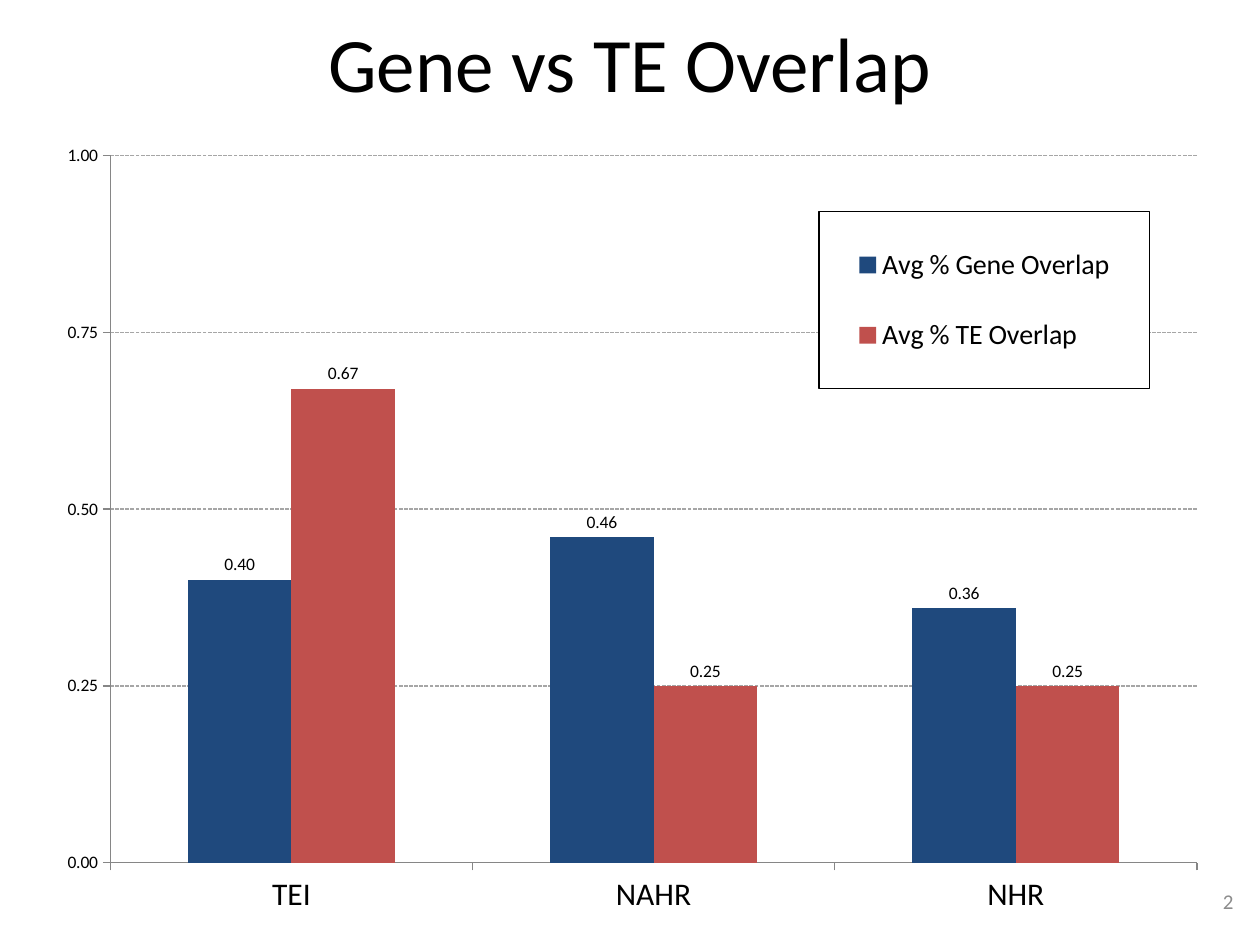
"""Build the Gene vs TE Overlap slide with a clustered column chart."""
from lxml import etree
from pptx import Presentation
from pptx import util as u
from pptx.chart.data import CategoryChartData
from pptx.dml.color import RGBColor
from pptx.enum import chart as ch, dml, text
from pptx.oxml import parse_xml
from pptx.oxml.ns import nsdecls, qn

TITLE = "Gene vs TE Overlap"
PAGE = "2"
CATEGORIES = ["TEI", "NAHR", "NHR"]
SERIES = [
    ("Avg % Gene Overlap", (0.40, 0.46, 0.36), "1F497D"),
    ("Avg % TE Overlap", (0.67, 0.25, 0.25), "C0504D"),
]
THEME = {
    "font": "Calibri", "ink": "000000", "paper": "FFFFFF", "page": "8C8C8C",
    "axis": "868686", "grid": "A6A6A6",
    "title": 44, "category": 18, "legend": 16, "number": 12, "label": 10,
}
BOXES = {
    "title": (36, -10, 648, 90),
    "chart": (22.5, 75, 675, 459.5),
    "page": (544.5, 500.5, 167.5, 28.5),
}
PLOT_AREA = {"x": 0.06, "y": 0.03, "w": 0.92, "h": 0.88}
LEGEND_AREA = {"x": 0.66, "y": 0.1, "w": 0.28, "h": 0.22}
NUMBER_FORMAT = "0.00"


def rgb(name):
    return RGBColor.from_string(THEME.get(name, name))


def style(font, size, color="ink"):
    font.name = THEME["font"]
    font.size = u.Pt(THEME[size])
    font.color.rgb = rgb(color)


def add_text(slide, content, box, size, color="ink", align="CENTER"):
    sp = slide.shapes.add_textbox(*map(u.Pt, BOXES[box]))
    tf = sp.text_frame
    tf.word_wrap = True
    tf.vertical_anchor = text.MSO_ANCHOR.MIDDLE
    p = tf.paragraphs[0]
    p.alignment = getattr(text.PP_ALIGN, align)
    r = p.add_run()
    r.text = content
    style(r.font, size, color)


def make_layout(area, inner=False):
    layout = etree.Element(qn("c:layout"))
    manual = etree.SubElement(layout, qn("c:manualLayout"))
    items = [("layoutTarget", "inner")] if inner else []
    items += [("xMode", "edge"), ("yMode", "edge"), *area.items()]
    for tag, value in items:
        etree.SubElement(manual, qn(f"c:{tag}")).set("val", str(value))
    return layout


def format_axis(axis, size):
    axis.major_tick_mark = ch.XL_TICK_MARK.OUTSIDE
    axis.minor_tick_mark = ch.XL_TICK_MARK.NONE
    axis.format.line.color.rgb = rgb("axis")
    axis.format.line.width = u.Pt(0.75)
    style(axis.tick_labels.font, size)


def format_legend(chart):
    chart.has_legend = True
    legend = chart.legend
    legend.position = ch.XL_LEGEND_POSITION.RIGHT
    legend.include_in_layout = False
    style(legend.font, "legend")
    element = legend._element
    for old in element.findall(qn("c:layout")):
        element.remove(old)
    element.find(qn("c:legendPos")).addnext(make_layout(LEGEND_AREA))
    element.find(qn("c:overlay")).addnext(parse_xml(
        f'<c:spPr {nsdecls("c", "a")}>'
        f'<a:solidFill><a:srgbClr val="{THEME["paper"]}"/></a:solidFill>'
        f'<a:ln w="9525"><a:solidFill><a:srgbClr val="{THEME["ink"]}"/></a:solidFill></a:ln>'
        "</c:spPr>"))


def add_overlap_chart(slide):
    data = CategoryChartData(number_format=NUMBER_FORMAT)
    data.categories = CATEGORIES
    for name, values, _ in SERIES:
        data.add_series(name, values)
    chart = slide.shapes.add_chart(
        ch.XL_CHART_TYPE.COLUMN_CLUSTERED, *map(u.Pt, BOXES["chart"]), data).chart
    chart.has_title = False
    style(chart.font, "label")

    plot = chart.plots[0]
    plot.gap_width, plot.overlap, plot.vary_by_categories = 150, 0, False
    for series, (_, _, color) in zip(plot.series, SERIES):
        series.format.fill.solid()
        series.format.fill.fore_color.rgb = rgb(color)
        series.invert_if_negative = False
        labels = series.data_labels
        labels.show_value = True
        labels.position = ch.XL_LABEL_POSITION.OUTSIDE_END
        labels.number_format = NUMBER_FORMAT
        labels.number_format_is_linked = False
        style(labels.font, "label")

    format_axis(chart.category_axis, "category")
    axis = chart.value_axis
    format_axis(axis, "label")
    axis.minimum_scale, axis.maximum_scale, axis.major_unit = 0, 1, 0.25
    axis.tick_labels.number_format = NUMBER_FORMAT
    axis.tick_labels.number_format_is_linked = False
    axis.has_major_gridlines = True
    line = axis.major_gridlines.format.line
    line.color.rgb = rgb("grid")
    line.width = u.Pt(0.75)
    line.dash_style = dml.MSO_LINE.SQUARE_DOT

    format_legend(chart)
    area = chart._chartSpace.chart.plotArea
    for old in area.findall(qn("c:layout")):
        area.remove(old)
    area.insert(0, make_layout(PLOT_AREA, inner=True))


def main():
    prs = Presentation()
    prs.slide_width, prs.slide_height = u.Pt(720), u.Pt(540)
    slide = prs.slides.add_slide(prs.slide_layouts[6])
    add_text(slide, TITLE, "title", "title")
    add_overlap_chart(slide)
    add_text(slide, PAGE, "page", "number", color="page", align="RIGHT")
    prs.save("out.pptx")


if __name__ == "__main__":
    main()
